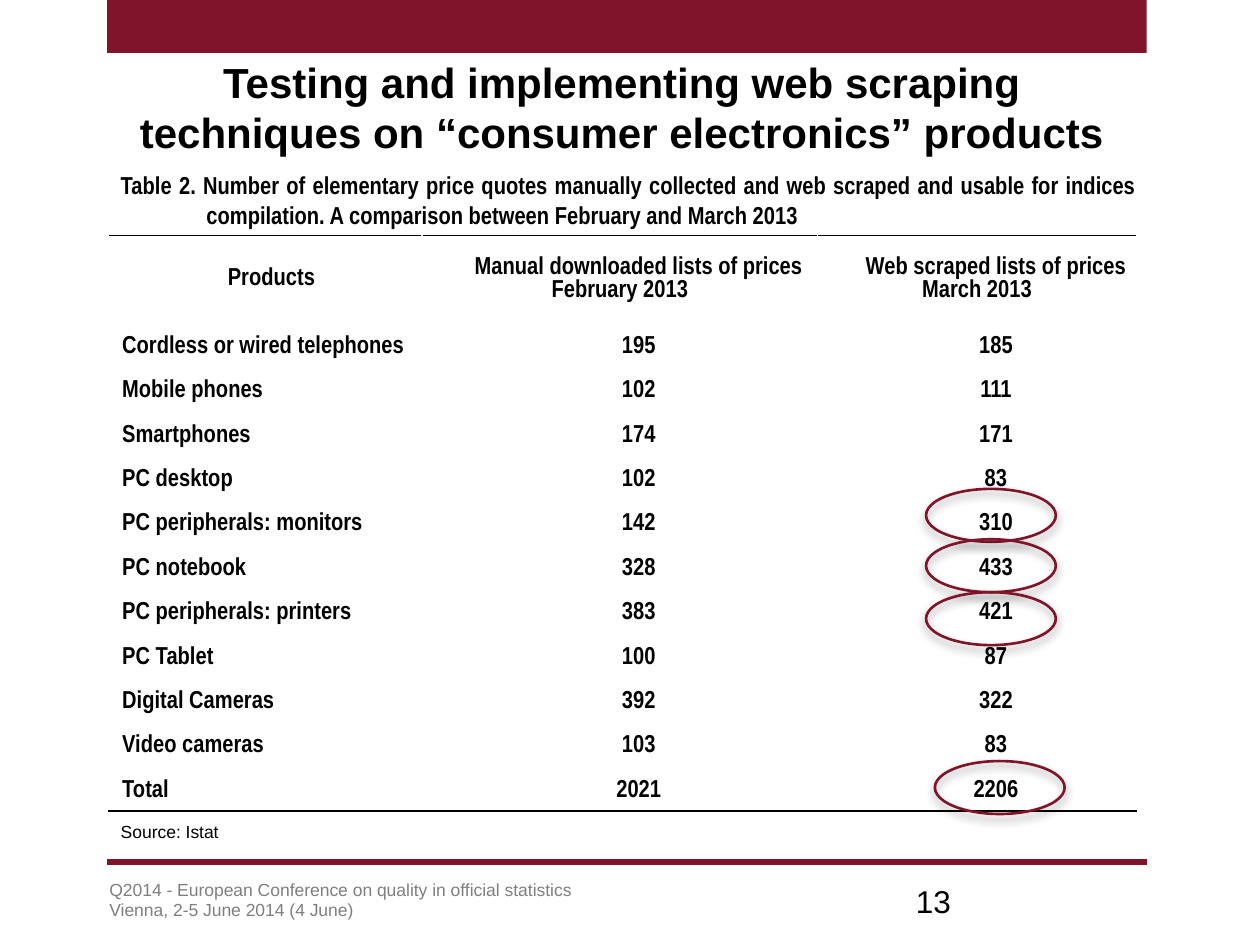
from dataclasses import dataclass

from lxml.etree import SubElement
from pptx import Presentation
from pptx.dml.color import RGBColor
from pptx.enum.shapes import MSO_CONNECTOR as Connector, MSO_SHAPE as Shape
from pptx.enum.text import MSO_ANCHOR as Anchor, PP_ALIGN as Align
from pptx.oxml import parse_xml
from pptx.oxml.ns import nsdecls, qn
from pptx.util import Inches, Pt


@dataclass(frozen=True)
class Theme:
    wine: RGBColor = RGBColor(0x7F, 0x14, 0x2A)
    black: RGBColor = RGBColor(0, 0, 0)
    grey: RGBColor = RGBColor(0x7F, 0x7F, 0x7F)
    sans: str = "Arial"
    narrow: str = "Arial Narrow"
    title: Pt = Pt(24)
    number: Pt = Pt(18)
    body: Pt = Pt(14)
    small: Pt = Pt(10)


theme = Theme()


def write(para, text, size, face=theme.sans, color=theme.black, bold=False,
          margin=0, indent=0, **formats):
    for name, value in formats.items():
        setattr(para, name, value)
    properties = para._p.get_or_add_pPr()
    properties.set("marL", str(Inches(margin)))
    properties.set("indent", str(Inches(indent)))
    span = para.add_run()
    span.text = text
    for name, value in {"size": size, "name": face, "bold": bold}.items():
        setattr(span.font, name, value)
    span.font.color.rgb = color


def add_box(page, left, top, width, height, anchor=Anchor.TOP):
    box = page.shapes.add_textbox(Inches(left), Inches(top), Inches(width), Inches(height))
    box.text_frame.word_wrap = True
    box.text_frame.vertical_anchor = anchor
    return box.text_frame


deck = Presentation()
deck.slide_width, deck.slide_height = Inches(10), Inches(7.5)
page = deck.slides.add_slide(deck.slide_layouts[6])

banner = page.shapes.add_shape(Shape.RECTANGLE, Inches(0.85), 0, Inches(8.25), Inches(0.42))
banner.shadow.inherit = False
banner.fill.solid()
banner.fill.fore_color.rgb = theme.wine
banner.line.fill.background()

rule = page.shapes.add_connector(
    Connector.STRAIGHT, Inches(0.85), Inches(6.84), Inches(9.1), Inches(6.84))
rule.line.color.rgb = theme.wine
rule.line.width = Pt(3.35)
SubElement(rule._element.spPr, qn("a:effectLst"))

footer = add_box(page, 0.77, 6.97, 7.66, 0.39)
write(footer.paragraphs[0], "Q2014 - European Conference on quality in official statistics",
      theme.small, color=theme.grey, line_spacing=0.7)
write(footer.add_paragraph(), "Vienna, 2-5 June 2014 (4 June)", theme.small, color=theme.grey)

page_number = add_box(page, 7.17, 6.95, 2.33, 0.4)
write(page_number.paragraphs[0], "13", theme.number)

title = add_box(page, 0.75, 0.4, 8.37, 0.87)
write(title.paragraphs[0],
      "Testing and implementing web scraping techniques on “consumer electronics” products",
      theme.title, bold=True, alignment=Align.CENTER)

rows = [
    ("Products", "Manual downloaded lists of prices February 2013",
     "Web scraped lists of prices March 2013"),
    ("Cordless or wired telephones", "195", "185"),
    ("Mobile phones", "102", "111"),
    ("Smartphones", "174", "171"),
    ("PC desktop", "102", "83"),
    ("PC peripherals: monitors", "142", "310"),
    ("PC notebook", "328", "433"),
    ("PC peripherals: printers", "383", "421"),
    ("PC Tablet", "100", "87"),
    ("Digital Cameras", "392", "322"),
    ("Video cameras", "103", "83"),
    ("Total", "2021", "2206"),
]
last_row = len(rows) - 1
header_height, table_height = 0.69, 4.57
row_height = (table_height - header_height) / last_row
edges = {0: "lnT", last_row: "lnB"}
cell_formats = {
    "vertical_anchor": Anchor.MIDDLE, "margin_left": Inches(0.01),
    "margin_right": Inches(0.01), "margin_top": Inches(0.01), "margin_bottom": 0,
}

table = page.shapes.add_table(
    len(rows), 3, Inches(0.86), Inches(1.87), Inches(8.16), Inches(table_height)).table
table.first_row = table.horz_banding = False
for column, width in zip(table.columns, (2.49, 3.14, 2.53)):
    column.width = Inches(width)

for r, values in enumerate(rows):
    table.rows[r].height = Inches(row_height if r else header_height)
    for c, value in enumerate(values):
        cell = table.cell(r, c)
        for name, setting in cell_formats.items():
            setattr(cell, name, setting)
        cell.fill.background()
        write(cell.text_frame.paragraphs[0], value, theme.body, theme.narrow, bold=True,
              indent=0.3 if c else 0.1,
              alignment=Align.LEFT if r and not c else Align.CENTER,
              line_spacing=Pt(15 if r else 13), space_after=Pt(6 if r else 0))
        if r in edges:
            cell._tc.get_or_add_tcPr().insert(0, parse_xml(
                f'<a:{edges[r]} {nsdecls("a")} w="{Pt(1)}"><a:solidFill>'
                f'<a:srgbClr val="{theme.black}"/></a:solidFill></a:{edges[r]}>'))

caption = add_box(page, 0.86, 1.3, 8.26, 0.57, Anchor.MIDDLE)
write(caption.paragraphs[0],
      "Table 2. Number of elementary price quotes manually collected and web scraped and usable "
      "for indices compilation. A comparison between February and March 2013",
      theme.body, theme.narrow, bold=True, margin=0.68, indent=-0.68, alignment=Align.JUSTIFY)

source = add_box(page, 0.86, 6.47, 1.51, 0.27)
write(source.paragraphs[0], "Source: Istat", theme.small)

for left, top in ((7.35, 3.88), (7.35, 4.28), (7.35, 4.7), (7.42, 6.04)):
    ring = page.shapes.add_shape(
        Shape.OVAL, Inches(left), Inches(top), Inches(1.03), Inches(0.42))
    ring.shadow.inherit = False
    ring.fill.background()
    ring.line.color.rgb = theme.wine
    ring.line.width = Pt(1.5)
    ring._element.spPr.find(qn("a:effectLst")).append(parse_xml(
        f'<a:outerShdw {nsdecls("a")} blurRad="{Pt(5.2)}" dist="{Pt(3)}" dir="5400000" '
        f'rotWithShape="0"><a:srgbClr val="{theme.black}"><a:alpha val="40000"/>'
        f'</a:srgbClr></a:outerShdw>'))

deck.save("out.pptx")
